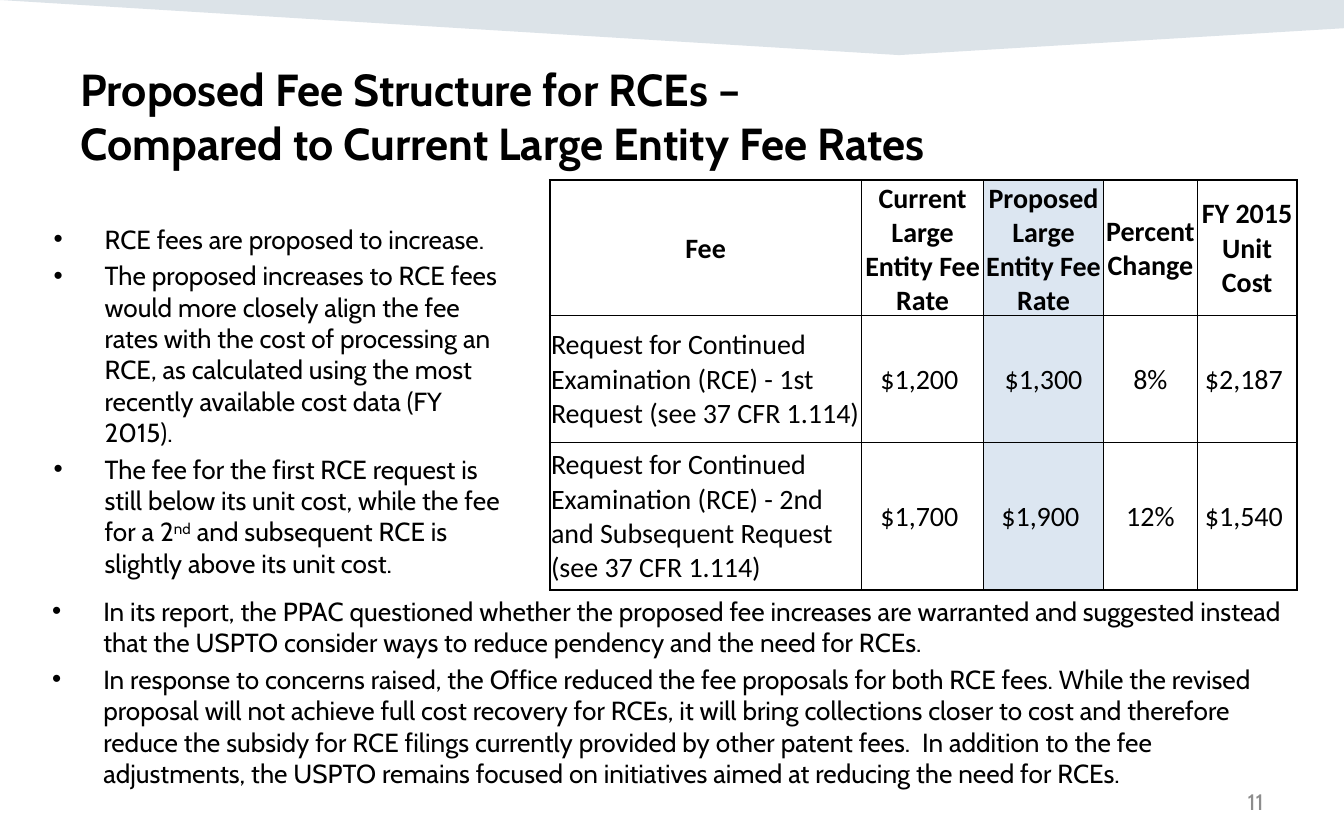
import pptx
import pptx.dml.color
import pptx.enum.text
import pptx.oxml.ns
import pptx.util
from lxml import etree

Inches = pptx.util.Inches
Pt = pptx.util.Pt
RGBColor = pptx.dml.color.RGBColor
Align = pptx.enum.text.PP_ALIGN
Anchor = pptx.enum.text.MSO_ANCHOR
AutoSize = pptx.enum.text.MSO_AUTO_SIZE
qn = pptx.oxml.ns.qn

BLACK = RGBColor(0x00, 0x00, 0x00)
WHITE = RGBColor(0xFF, 0xFF, 0xFF)
GRAY = RGBColor(0x8C, 0x8C, 0x8C)
NAVY = RGBColor(0x16, 0x44, 0x69)
PALE_BLUE = RGBColor(0xDC, 0xE6, 0xF1)

TITLE = "Proposed Fee Structure for RCEs – \vCompared to Current Large Entity Fee Rates"

# Each bullet is a list of runs; every second run is superscript
FEE_BULLETS = [
    ["RCE fees are proposed to increase."],
    ["The proposed increases to RCE fees would more closely align the fee rates with "
     "the cost of processing an RCE, as calculated using the most recently available "
     "cost data (FY 2015)."],
    ["The fee for the first RCE request is still below its unit cost, while the fee for a 2",
     "nd", " and subsequent RCE is slightly above its unit cost."],
]
RESPONSE_BULLETS = [
    ["In its report, the PPAC questioned whether the proposed fee increases are warranted "
     "and suggested instead that the USPTO consider ways to reduce pendency and the need "
     "for RCEs."],
    ["In response to concerns raised, the Office reduced the fee proposals for both RCE "
     "fees. While the revised proposal will not achieve full cost recovery for RCEs, it "
     "will bring collections closer to cost and therefore reduce the subsidy for RCE "
     "filings currently provided by other patent fees.  In addition to the fee "
     "adjustments, the USPTO remains focused on initiatives aimed at reducing the need "
     "for RCEs."],
]
FEE_ROWS = [
    ["Fee", "Current Large Entity Fee Rate", "Proposed Large Entity Fee Rate",
     "Percent Change", "FY 2015 Unit Cost"],
    ["Request for Continued Examination (RCE) - 1st Request (see 37 CFR 1.114)",
     "$1,200 ", "$1,300", "8%", "$2,187 "],
    ["Request for Continued Examination (RCE) - 2nd and Subsequent Request "
     "(see 37 CFR 1.114)", "$1,700 ", "$1,900 ", "12%", "$1,540 "],
]
COLUMN_WIDTHS = [2.32, 0.91, 0.89, 0.7, 0.74]
ROW_HEIGHTS = [1.01, 0.94, 1.1]


class SlideBuilder:
    text_font = "Cabin"
    table_font = "Calibri"
    body_size = 14
    table_size = 15

    def __init__(self, slide):
        self.slide = slide

    def style(self, paragraph, name, size, color=BLACK, bold=False, align=Align.LEFT):
        paragraph.alignment = align
        font = paragraph.font
        font.name, font.size, font.bold = name, Pt(size), bold
        font.color.rgb = color

    def band(self, points, color, opacity):
        start, *rest = [(Inches(x), Inches(y)) for x, y in points]
        builder = self.slide.shapes.build_freeform(*start)
        builder.add_line_segments(rest, close=True)
        shape = builder.convert_to_shape()
        shape.shadow.inherit = False
        shape.line.fill.background()
        shape.fill.solid()
        shape.fill.fore_color.rgb = color
        color_element = shape._element.spPr.find(".//" + qn("a:srgbClr"))
        etree.SubElement(color_element, qn("a:alpha"), val=str(opacity * 1000))

    def title(self, text, left, top, width, height):
        shape = self.slide.shapes.title
        shape.left, shape.top = Inches(left), Inches(top)
        shape.width, shape.height = Inches(width), Inches(height)
        frame = shape.text_frame
        frame.text = text
        frame.vertical_anchor = Anchor.TOP
        frame.auto_size = AutoSize.NONE
        self.style(frame.paragraphs[0], self.text_font, 24, bold=True)

    def text_box(self, left, top, width, height):
        box = self.slide.shapes.add_textbox(
            Inches(left), Inches(top), Inches(width), Inches(height))
        box.text_frame.word_wrap = True
        return box.text_frame

    def page_number(self, text, left, top, width, height):
        frame = self.text_box(left, top, width, height)
        frame.vertical_anchor = Anchor.MIDDLE
        frame.text = text
        self.style(frame.paragraphs[0], self.text_font, 12, GRAY, align=Align.RIGHT)

    def bullets(self, items, left, top, width, height):
        frame = self.text_box(left, top, width, height)
        for index, runs in enumerate(items):
            paragraph = frame.add_paragraph() if index else frame.paragraphs[0]
            paragraph.space_before = Pt(0.2 * self.body_size)
            properties = paragraph._p.get_or_add_pPr()
            properties.set("marL", str(Inches(0.38)))
            properties.set("indent", str(-Inches(0.38)))
            etree.SubElement(properties, qn("a:buFont"), typeface="Arial")
            etree.SubElement(properties, qn("a:buChar"), char="•")
            self.style(paragraph, self.text_font, self.body_size)
            for position, text in enumerate(runs):
                run = paragraph.add_run()
                run.text = text
                if position % 2:
                    run.font._element.set("baseline", "30000")

    def borders(self, cell, widths):
        properties = cell._tc.get_or_add_tcPr()
        for index, (side, width) in enumerate(zip("LRTB", widths)):
            line = etree.Element(qn("a:ln" + side), w=str(Pt(width)))
            fill = etree.SubElement(line, qn("a:solidFill"))
            etree.SubElement(fill, qn("a:srgbClr"), val=str(BLACK))
            properties.insert(index, line)

    def table(self, rows, column_widths, row_heights, left, top, highlight):
        last_row, last_column = len(rows) - 1, len(column_widths) - 1
        table = self.slide.shapes.add_table(
            len(rows), len(column_widths), Inches(left), Inches(top),
            Inches(sum(column_widths)), Inches(sum(row_heights))).table
        table.first_row = table.horz_banding = False
        for column, width in zip(table.columns, column_widths):
            column.width = Inches(width)
        for r, texts in enumerate(rows):
            table.rows[r].height = Inches(row_heights[r])
            for c, text in enumerate(texts):
                cell = table.cell(r, c)
                cell.text = text
                cell.vertical_anchor = Anchor.MIDDLE
                cell.margin_left = cell.margin_right = cell.margin_top = Inches(0.01)
                cell.margin_bottom = 0
                cell.fill.solid()
                cell.fill.fore_color.rgb = PALE_BLUE if c == highlight else WHITE
                # Heavier lines around the outside of the table
                outer = (c == 0, c == last_column, r == 0, r == last_row)
                self.borders(cell, [1 if edge else 0.5 for edge in outer])
                align = Align.LEFT if r and c == 0 else Align.CENTER
                self.style(cell.text_frame.paragraphs[0], self.table_font,
                           self.table_size, bold=r == 0, align=align)


def main():
    presentation = pptx.Presentation()
    presentation.slide_width = Inches(10)
    presentation.slide_height = Inches(6.25)
    builder = SlideBuilder(presentation.slides.add_slide(presentation.slide_layouts[5]))

    # Header band and title
    builder.band([(0, 0), (10, 0), (10, 0.21), (6.69, 0.41)], NAVY, opacity=15)
    builder.title(TITLE, 0.5, 0.41, 9, 0.89)

    # Page number
    builder.page_number("11", 7.17, 5.8, 2.33, 0.33)

    # Bullets beside and below the table
    builder.bullets(FEE_BULLETS, 0.3, 1.61, 3.58, 2.86)
    builder.bullets(RESPONSE_BULLETS, 0.29, 4.38, 9.35, 1.56)

    # Fee comparison table
    builder.table(FEE_ROWS, COLUMN_WIDTHS, ROW_HEIGHTS, 4.09, 1.34, highlight=2)

    presentation.save("out.pptx")


if __name__ == "__main__":
    main()
